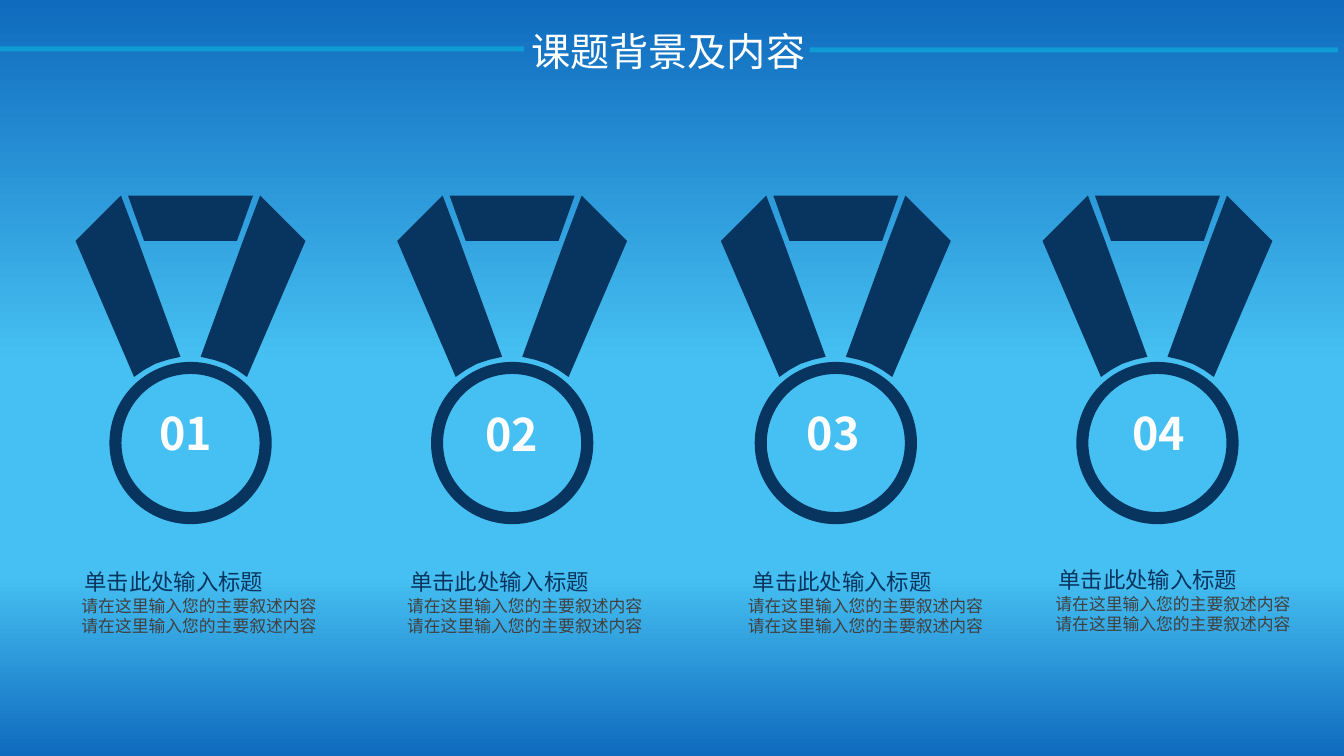
from dataclasses import dataclass

from lxml.etree import SubElement
from pptx import Presentation
from pptx.dml.color import RGBColor
from pptx.enum.shapes import MSO_SHAPE as Preset
from pptx.enum.text import PP_ALIGN as Align
from pptx.oxml.ns import qn
from pptx.shapes.base import BaseShape
from pptx.slide import Slide
from pptx.text.text import _Paragraph as Paragraph
from pptx.util import Inches, Pt

FONT = "Noto Sans CJK SC"
NAVY, WHITE, GREY, BAR_BLUE = "08355F", "FFFFFF", "404040", "0F9BD4"
BACKGROUND_STOPS = [(0, "0F6BBE"), (48, "46C0F2"), (76, "46C0F2"), (100, "0F6BBE")]

MEDAL_TOP = 1.94
RIBBON_SPAN = 2.28
RING_SIZE, RING_THICKNESS = 1.61, 0.12
# Outlines relative to the top left corner of a medal
COLLAR = [(0.52, 0), (1.76, 0), (1.6, 0.45), (0.68, 0.45)]
LEFT_RIBBON = [(0, 0.45), (0.58, 1.8), (0.68, 1.73), (0.79, 1.67),
               (0.91, 1.63), (1.04, 1.6), (0.62, 0.45), (0.45, 0)]
RIGHT_RIBBON = [(RIBBON_SPAN - x, y) for x, y in LEFT_RIBBON]

HEADING = "单击此处输入标题"
BODY_LINES = ["请在这里输入您的主要叙述内容"] * 2


@dataclass
class Medal:
    number: str
    left: float
    number_left: float
    number_top: float
    caption_left: float
    caption_top: float
    heading_indent: float = 0.03


MEDALS = [
    Medal("01", 0.75, 1.23, 3.98, 0.71, 5.59),
    Medal("02", 3.94, 4.46, 3.99, 3.94, 5.59),
    Medal("03", 7.15, 7.65, 3.98, 7.32, 5.59, 0.05),
    Medal("04", 10.34, 10.88, 3.98, 10.37, 5.57),
]


def color(value: str) -> RGBColor:
    return RGBColor.from_string(value)


def paint(shape: BaseShape, fill: str) -> None:
    """Give the shape a flat fill without outline or shadow."""
    shape.fill.solid()
    shape.fill.fore_color.rgb = color(fill)
    shape.line.fill.background()
    shape.shadow.inherit = False


def add_preset(slide: Slide, preset: Preset, left: float, top: float,
               width: float, height: float, fill: str) -> BaseShape:
    shape = slide.shapes.add_shape(
        preset, Inches(left), Inches(top), Inches(width), Inches(height))
    paint(shape, fill)
    return shape


def add_polygon(slide: Slide, outline: list[tuple[float, float]],
                left: float, top: float) -> None:
    points = [(Inches(left + x), Inches(top + y)) for x, y in outline]
    builder = slide.shapes.build_freeform(*points[0])
    builder.add_line_segments(points[1:], close=True)
    paint(builder.convert_to_shape(), NAVY)


def add_text(slide: Slide, lines: list[tuple[str, dict, str]], left: float,
             top: float, width: float, height: float) -> list[Paragraph]:
    """Add a text box; each line is its text, font format and colour."""
    box = slide.shapes.add_textbox(
        Inches(left), Inches(top), Inches(width), Inches(height))
    frame = box.text_frame
    frame.word_wrap = True
    for index, (text, font_format, text_color) in enumerate(lines):
        paragraph = frame.add_paragraph() if index else frame.paragraphs[0]
        run = paragraph.add_run()
        run.text = text
        for name, value in {"name": FONT, **font_format}.items():
            setattr(run.font, name, value)
        run.font.color.rgb = color(text_color)
        SubElement(run.font._element, qn("a:ea"), typeface=FONT)
    return list(frame.paragraphs)


def set_background(slide: Slide) -> None:
    fill = slide.background.fill
    fill.gradient()
    fill.gradient_angle = 270
    stop_list = slide.element.find(".//" + qn("a:gsLst"))
    for stop in list(stop_list):
        stop_list.remove(stop)
    for percent, value in BACKGROUND_STOPS:
        stop = SubElement(stop_list, qn("a:gs"), pos=str(percent * 1000))
        SubElement(stop, qn("a:srgbClr"), val=value)


def add_medal(slide: Slide, medal: Medal) -> None:
    for outline in (COLLAR, LEFT_RIBBON, RIGHT_RIBBON):
        add_polygon(slide, outline, medal.left, MEDAL_TOP)
    ring_left = medal.left + (RIBBON_SPAN - RING_SIZE) / 2
    ring = add_preset(slide, Preset.DONUT, ring_left, MEDAL_TOP + 1.65,
                      RING_SIZE, RING_SIZE, NAVY)
    ring.adjustments[0] = RING_THICKNESS / RING_SIZE

    number_format = {"size": Pt(32), "bold": True}
    number = add_text(slide, [(medal.number, number_format, WHITE)],
                      medal.number_left, medal.number_top, 1.23, 0.64)
    number[0].alignment = Align.CENTER


def add_caption(slide: Slide, medal: Medal) -> None:
    lines = [(HEADING, {"size": Pt(16)}, NAVY)]
    lines += [(text, {"size": Pt(12)}, GREY) for text in BODY_LINES]
    heading = add_text(slide, lines, medal.caption_left, medal.caption_top, 2.56, 0.91)[0]
    heading._p.get_or_add_pPr().set("indent", str(Inches(medal.heading_indent)))


def main() -> None:
    presentation = Presentation()
    presentation.slide_width = Inches(13.33)
    presentation.slide_height = Inches(7.5)
    slide = presentation.slides.add_slide(presentation.slide_layouts[6])
    set_background(slide)
    for medal in MEDALS:
        add_medal(slide, medal)
    for medal in MEDALS:
        add_caption(slide, medal)
    add_preset(slide, Preset.RECTANGLE, 0, 0.46, 5.2, 0.05, BAR_BLUE)
    add_text(slide, [("课题背景及内容", {"size": Pt(28)}, WHITE)], 5.17, 0.22, 2.96, 0.57)
    add_preset(slide, Preset.RECTANGLE, 8.03, 0.47, 5.24, 0.05, BAR_BLUE)
    presentation.save("out.pptx")


if __name__ == "__main__":
    main()
